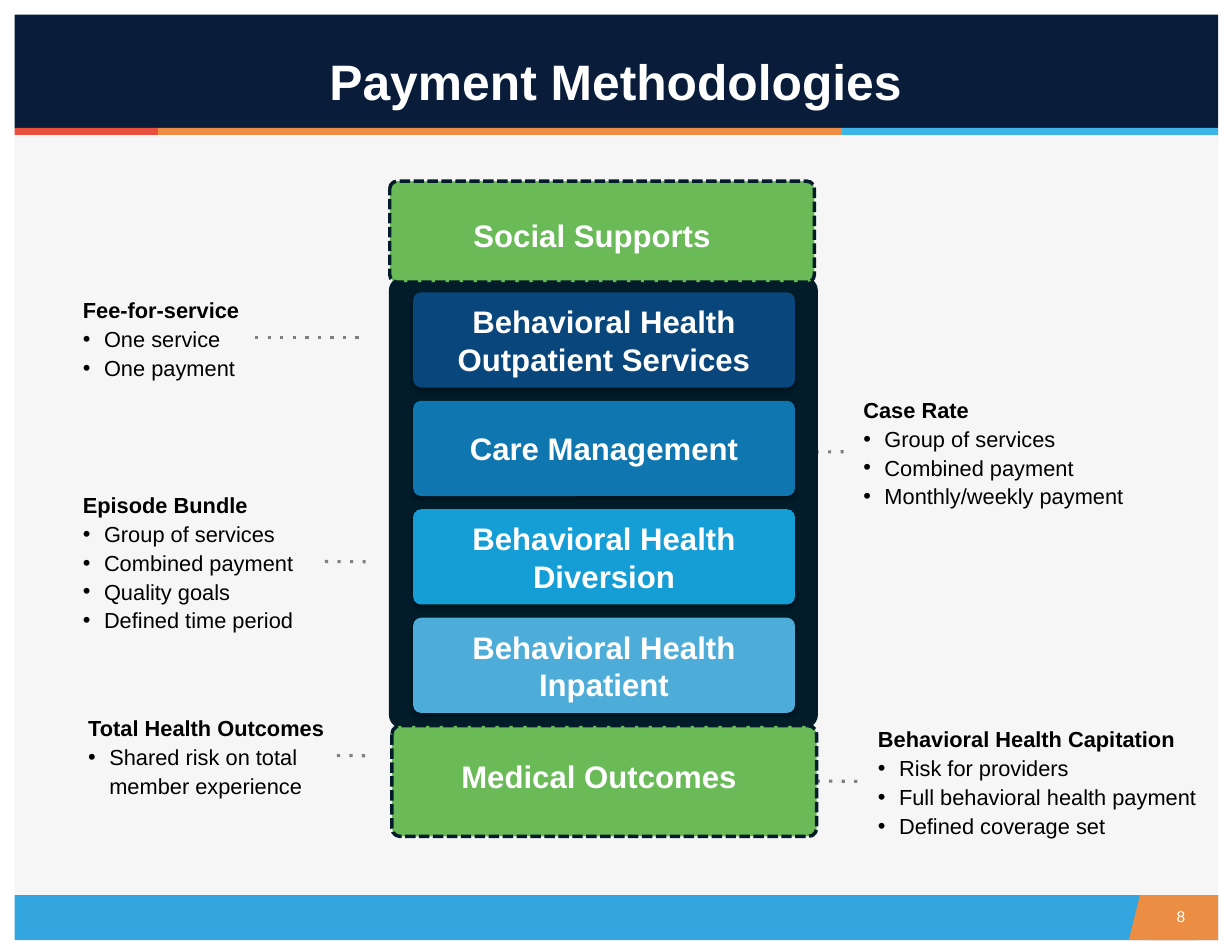
"""Build the Payment Methodologies slide."""
from itertools import accumulate

from lxml.etree import SubElement
from pptx import Presentation
from pptx.dml.color import RGBColor as Rgb
from pptx.enum.shapes import MSO_CONNECTOR as Link, MSO_SHAPE as Shape
from pptx.enum.text import MSO_ANCHOR as Anchor, MSO_AUTO_SIZE as Fit, PP_ALIGN as Align
from pptx.oxml.ns import qn
from pptx.util import Cm, Pt

THEME = {
    "font": "Arial",
    "sizes": {"title": 32, "block": 20, "callout": 14, "number": 10},
    "colors": {
        "panel": "F6F6F6", "navy": "091D3B", "sky": "33A6E0", "orange": "EB8E44",
        "red": "E8503E", "cyan": "3DB5E6", "frame": "021C2A", "green": "6ABA58",
        "deep": "08467B", "blue": "0F76AF", "bright": "149ED5", "pale": "4EADD8",
        "dots": "808080", "white": "FFFFFF", "black": "000000",
    },
}

TITLE = "Payment Methodologies"
PAGE_NUMBER = "8"
LEFT, WIDTH = 0.33, 27.3
BANDS = [
    (Shape.RECTANGLE, (LEFT, 2.9, WIDTH, 17.4), "panel"),
    (Shape.RECTANGLE, (LEFT, 20.3, WIDTH, 1.02), "sky"),
    (Shape.PARALLELOGRAM, (25.6, 20.3, 1.78, 1.02), "orange"),
    (Shape.RECTANGLE, (26.09, 20.3, 1.54, 1.02), "orange"),
    (Shape.RECTANGLE, (LEFT, 0.33, WIDTH, 2.57), "navy"),
]
STRIPES = [("red", 3.25), ("orange", 15.52), ("cyan", 8.53)]
CALLOUTS = [
    {"head": "Fee-for-service", "items": ["One service", "One payment"],
     "lines": 3, "at": (1.63, 6.55, 5.13), "link": (5.79, 8.23, 7.65)},
    {"head": "Case Rate",
     "items": ["Group of services", "Combined payment", "Monthly/weekly payment"],
     "lines": 4, "at": (19.33, 8.81, 6.83), "link": (18.21, 19.33, 10.25), "join": "end"},
    {"head": "Episode Bundle",
     "items": ["Group of services", "Combined payment", "Quality goals", "Defined time period"],
     "lines": 5, "at": (1.63, 10.97, 5.74), "link": (7.37, 8.36, 12.74), "join": "begin"},
    {"head": "Total Health Outcomes", "items": ["Shared risk on total member experience"],
     "lines": 3, "at": (1.75, 16.03, 5.89), "link": (7.64, 8.48, 17.14), "join": "begin"},
    {"head": "Behavioral Health Capitation",
     "items": ["Risk for providers", "Full behavioral health payment", "Defined coverage set"],
     "lines": 4, "at": (19.66, 16.28, 7.77), "link": (18.52, 19.53, 17.72)},
]
SERVICES = [
    (["Behavioral Health Outpatient Services"], "deep"),
    (["Care Management"], "blue"),
    (["Behavioral Health", "Diversion"], "bright"),
    (["Behavioral Health", "Inpatient"], "pale"),
]
FRAME = (8.86, 6.32, 9.65, 10.16)
SERVICE_LEFT, SERVICE_TOP, SERVICE_WIDTH, SERVICE_HEIGHT, SERVICE_PITCH = 9.37, 6.63, 8.66, 2.16, 2.46
OUTCOMES = [
    ("Social Supports", (8.84, 4.11, 9.63, 2.29), (1.85, 0.15, 0, 0)),
    ("Medical Outcomes", (8.89, 16.46, 9.63, 2.51), (1.52, 0, 0, 0.25)),
]


def color(name):
    return Rgb.from_string(THEME["colors"][name])


def apply(target, values):
    for name, value in values.items():
        setattr(target, name, value)


def lengths(values):
    return [Cm(value) for value in values]


def set_frame(frame, insets, anchor=Anchor.MIDDLE):
    margins = zip(("margin_left", "margin_top", "margin_right", "margin_bottom"), lengths(insets))
    apply(frame, {"word_wrap": True, "auto_size": Fit.NONE, "vertical_anchor": anchor, **dict(margins)})


def write(frame, texts, size, ink="white", bold=True, **layout):
    for index, text in enumerate(texts):
        para = frame.paragraphs[0] if index == 0 else frame.add_paragraph()
        apply(para, layout)
        span = para.add_run()
        span.text = text
        apply(span.font, {"name": THEME["font"], "size": Pt(THEME["sizes"][size]), "bold": bold})
        span.font.color.rgb = color(ink)


def outline(shape, ink, width, dash=None):
    shape.line.color.rgb = color(ink)
    shape.line.width = Pt(width)
    if dash:
        SubElement(shape.element.spPr.find(qn("a:ln")), qn("a:prstDash"), val=dash)


def add_block(page, kind, place, fill, corner=None):
    block = page.shapes.add_shape(kind, *lengths(place))
    block.shadow.inherit = False
    block.fill.solid()
    block.fill.fore_color.rgb = color(fill)
    block.line.fill.background()
    if corner is not None:
        block.adjustments[0] = corner
    return block


def add_shadow(block):
    effects = block.element.spPr.find(qn("a:effectLst"))
    values = {"blurRad": str(Pt(3.1)), "dist": str(Pt(1.8)), "dir": "5400000", "rotWithShape": "0"}
    shadow = SubElement(effects, qn("a:outerShdw"), **values)
    ink = SubElement(shadow, qn("a:srgbClr"), val=THEME["colors"]["black"])
    SubElement(ink, qn("a:alpha"), val="35000")


def add_bullet(para):
    properties = para._p.get_or_add_pPr()
    apply_indent = {"marL": Cm(0.48), "indent": -Cm(0.48)}
    for name, value in apply_indent.items():
        properties.set(name, str(value))
    SubElement(properties, qn("a:buFont"), typeface=THEME["font"])
    SubElement(properties, qn("a:buChar"), char="•")


def add_callout(page, callout):
    height = 0.23 + 0.66 * callout["lines"]
    box = page.shapes.add_textbox(*lengths((*callout["at"], height)))
    frame = box.text_frame
    set_frame(frame, (0.25, 0.13, 0.25, 0.13), Anchor.TOP)
    write(frame, [callout["head"], *callout["items"]], "callout", "black", False, line_spacing=1.1)
    frame.paragraphs[0].runs[0].font.bold = True
    for para in frame.paragraphs[1:]:
        add_bullet(para)
    start, end, level = callout["link"]
    link = page.shapes.add_connector(Link.STRAIGHT, *lengths((start, level, end, level)))
    outline(link, "dots", 2, "dot")
    SubElement(link.element.spPr, qn("a:effectLst"))
    if callout.get("join") == "begin":
        link.begin_connect(box, 3)
    elif callout.get("join") == "end":
        link.end_connect(box, 1)
    return link


def add_backdrop(page):
    for kind, place, fill in BANDS:
        add_block(page, kind, place, fill)
    ends = accumulate(width for _, width in STRIPES)
    for (fill, width), end in zip(STRIPES, ends):
        stripe = add_block(page, Shape.RECTANGLE, (LEFT + end - width, 2.9, width, 0.16), fill)
    title = page.shapes.title
    stripe.element.addnext(title.element)
    apply(title, dict(zip(("left", "top", "width", "height"), lengths((LEFT, 1.02, 27.28, 1.78)))))
    set_frame(title.text_frame, (0.28, 0.15, 0.28, 0.15))
    write(title.text_frame, [TITLE], "title", alignment=Align.CENTER, line_spacing=0.9)
    number = page.shapes.add_textbox(*lengths((24.59, 20.3, 2.57, 0.97)))
    set_frame(number.text_frame, (0.28, 0.15, 0.28, 0.15))
    write(number.text_frame, [PAGE_NUMBER], "number", bold=False, alignment=Align.RIGHT)


def add_stack(page):
    frame = add_block(page, Shape.ROUNDED_RECTANGLE, FRAME, "frame", 0.028)
    outline(frame, "frame", 2.25)
    for index, (texts, fill) in enumerate(SERVICES):
        top = SERVICE_TOP + index * SERVICE_PITCH
        place = (SERVICE_LEFT, top, SERVICE_WIDTH, SERVICE_HEIGHT)
        service = add_block(page, Shape.ROUNDED_RECTANGLE, place, fill, 0.083)
        add_shadow(service)
        set_frame(service.text_frame, (0.2, 0, 0.2, 0))
        write(service.text_frame, texts, "block", alignment=Align.CENTER)
    for text, place, insets in OUTCOMES:
        outcome = add_block(page, Shape.ROUNDED_RECTANGLE, place, "green", 0.073)
        outline(outcome, "frame", 2.25, "sysDash")
        set_frame(outcome.text_frame, insets)
        write(outcome.text_frame, [text], "block", alignment=Align.LEFT)
    return outcome


def main():
    deck = Presentation()
    apply(deck, {"slide_width": Cm(27.94), "slide_height": Cm(21.59)})
    page = deck.slides.add_slide(deck.slide_layouts[5])
    add_backdrop(page)
    links = [add_callout(page, callout) for callout in CALLOUTS]
    medical_outcomes = add_stack(page)
    links[-1].begin_connect(medical_outcomes, 3)
    deck.save("out.pptx")


if __name__ == "__main__":
    main()
